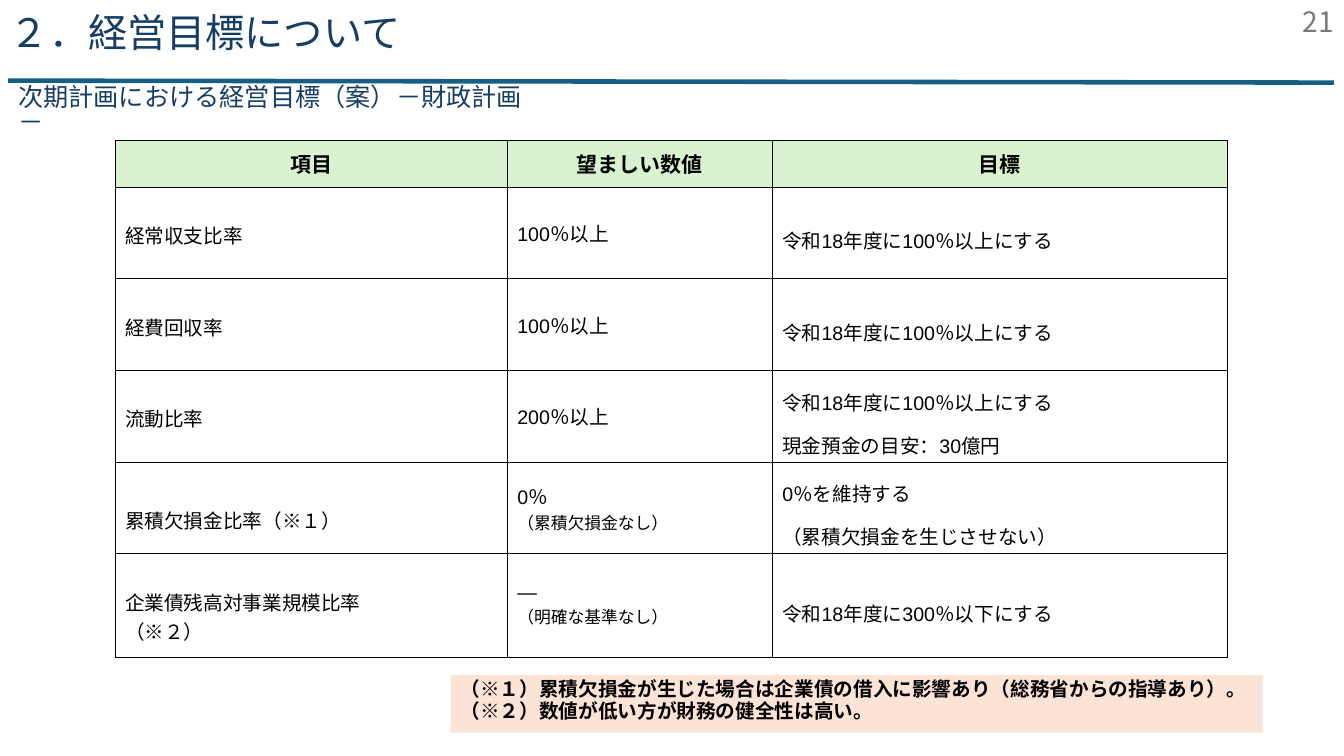
from lxml.etree import SubElement
from pptx import Presentation
from pptx.dml.color import RGBColor
from pptx.enum.shapes import MSO_CONNECTOR, MSO_SHAPE
from pptx.enum.text import MSO_ANCHOR, PP_ALIGN
from pptx.oxml.ns import qn
from pptx.util import Pt

TITLE = "２．経営目標について"
SUBTITLE = "次期計画における経営目標（案）－財政計画－"
PAGE_NUMBER = "21"
HEADERS = ["項目", "望ましい数値", "目標"]
GOALS = [
    (["経常収支比率"], ["100％以上"], ["令和18年度に100％以上にする"]),
    (["経費回収率"], ["100％以上"], ["令和18年度に100％以上にする"]),
    (["流動比率"], ["200％以上"], ["令和18年度に100％以上にする", "現金預金の目安：30億円"]),
    (["累積欠損金比率（※１）"], ["0％", "（累積欠損金なし）"],
     ["0％を維持する", "（累積欠損金を生じさせない）"]),
    (["企業債残高対事業規模比率", "（※２）"], ["―", "（明確な基準なし）"],
     ["令和18年度に300％以下にする"]),
]
NOTES = [
    "（※１）累積欠損金が生じた場合は企業債の借入に影響あり（総務省からの指導あり）。",
    "（※２）数値が低い方が財務の健全性は高い。",
]

JAPANESE = "Noto Sans CJK JP"
LATIN = "Arial"
NAVY, GRAY, BLACK = "163E64", "797979", "000000"
COLUMN_WIDTHS = [280.2, 189.3, 325]
ROW_HEIGHTS = [33.5, 65.4, 65.4, 65.4, 65.4, 74.3]
ITEM_TOP_MARGINS = [3, 3, 3, 18, 16]


def color(value):
    return RGBColor.from_string(value)


def write(frame, lines, sizes, font, ink, bold=False, align=PP_ALIGN.LEFT, spacing=None):
    """Fill a text frame with one paragraph per line; the last size repeats."""
    frame.word_wrap = True
    for index, line in enumerate(lines):
        para = frame.paragraphs[0] if index == 0 else frame.add_paragraph()
        para.alignment = align
        if spacing:
            para.line_spacing = spacing
        span = para.add_run()
        span.text = line
        para.font.size = Pt(sizes[min(index, len(sizes) - 1)])
        para.font.name = font
        para.font.bold = bold
        para.font.color.rgb = color(ink)
        east_asian = SubElement(span._r.get_or_add_rPr(), qn("a:ea"))
        east_asian.set("typeface", JAPANESE)


def add_text(page, bounds, text, size, ink, align=PP_ALIGN.LEFT,
             anchor=MSO_ANCHOR.TOP, spacing=None):
    box = page.shapes.add_textbox(*map(Pt, bounds))
    box.text_frame.vertical_anchor = anchor
    write(box.text_frame, [text], [size], JAPANESE, ink, align=align, spacing=spacing)


def add_borders(cell):
    properties = cell._tc.get_or_add_tcPr()
    for index, side in enumerate(("lnL", "lnR", "lnT", "lnB")):
        line = properties.makeelement(qn("a:" + side), {"w": str(Pt(0.5))})
        fill = SubElement(line, qn("a:solidFill"))
        SubElement(fill, qn("a:srgbClr")).set("val", BLACK)
        properties.insert(index, line)


def add_goal_table(page):
    frame = page.shapes.add_table(
        len(ROW_HEIGHTS), len(COLUMN_WIDTHS), Pt(82.1), Pt(100.2),
        Pt(sum(COLUMN_WIDTHS)), Pt(sum(ROW_HEIGHTS)))
    table = frame.table
    table.horz_banding = False
    for column, width in zip(table.columns, COLUMN_WIDTHS):
        column.width = Pt(width)
    for row, height in zip(table.rows, ROW_HEIGHTS):
        row.height = Pt(height)
    for cell in table.iter_cells():
        cell.vertical_anchor = MSO_ANCHOR.MIDDLE
        cell.margin_top = cell.margin_bottom = 0
        cell.fill.background()
        add_borders(cell)
    for column, header in enumerate(HEADERS):
        cell = table.cell(0, column)
        cell.fill.solid()
        cell.fill.fore_color.rgb = color("D9F2D0")
        write(cell.text_frame, [header], [15], LATIN, BLACK, True, PP_ALIGN.CENTER)
    column_styles = [([14], None), ([14, 12], None), ([14], 1.5)]
    for row, goal in enumerate(GOALS, start=1):
        for column, (lines, (sizes, spacing)) in enumerate(zip(goal, column_styles)):
            write(table.cell(row, column).text_frame, lines, sizes, LATIN, BLACK,
                  spacing=spacing)
        table.cell(row, 0).margin_top = Pt(ITEM_TOP_MARGINS[row - 1])


def add_notes_box(page):
    box = page.shapes.add_shape(MSO_SHAPE.RECTANGLE, Pt(322), Pt(482.2), Pt(580), Pt(41.2))
    box.shadow.inherit = False
    box.fill.solid()
    box.fill.fore_color.rgb = color("FBE3D6")
    box.line.fill.background()
    box.text_frame.vertical_anchor = MSO_ANCHOR.TOP
    write(box.text_frame, NOTES, [14], JAPANESE, BLACK, True, spacing=0.9)


def add_rule(page):
    rule = page.shapes.add_connector(
        MSO_CONNECTOR.STRAIGHT, Pt(5.8), Pt(57.6), Pt(952.8), Pt(59))
    rule.line.color.rgb = color("156082")
    rule.line.width = Pt(3.25)
    SubElement(rule._element.spPr, qn("a:effectLst"))


def main():
    deck = Presentation()
    deck.slide_width, deck.slide_height = Pt(960), Pt(540)
    page = deck.slides.add_slide(deck.slide_layouts[6])
    add_rule(page)
    add_text(page, (0, 6.5, 480, 41), TITLE, 28, NAVY, spacing=0.9)
    add_text(page, (744, 0.7, 216, 28.8), PAGE_NUMBER, 20, GRAY,
             PP_ALIGN.RIGHT, MSO_ANCHOR.MIDDLE)
    add_text(page, (5.8, 59, 378.7, 28.8), SUBTITLE, 18, NAVY, spacing=0.8)
    add_goal_table(page)
    add_notes_box(page)
    deck.save("out.pptx")


if __name__ == "__main__":
    main()
